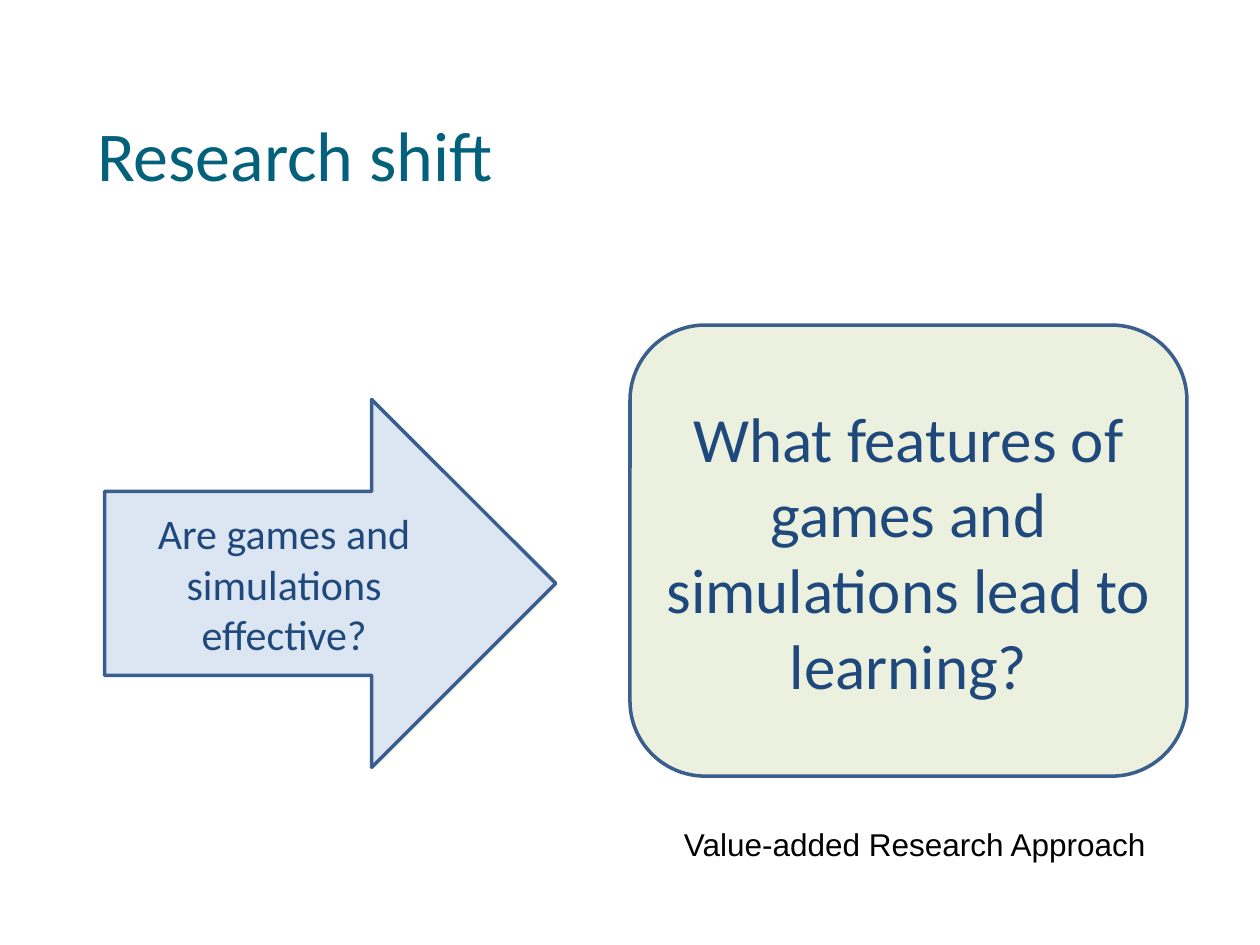
from pptx import Presentation
from pptx.dml.color import RGBColor
from pptx.enum.shapes import MSO_SHAPE
from pptx.enum.text import MSO_ANCHOR, PP_ALIGN
from pptx.util import Inches, Pt


def color(hex_string):
    return RGBColor.from_string(hex_string)


def write_text(shape, text, font_format, font_color, alignment, wrap):
    frame = shape.text_frame
    frame.word_wrap = wrap
    frame.vertical_anchor = MSO_ANCHOR.MIDDLE
    paragraph = frame.paragraphs[0]
    paragraph.alignment = alignment
    run = paragraph.add_run()
    run.text = text
    for name, value in font_format.items():
        setattr(run.font, name, value)
    run.font.color.rgb = color(font_color)


presentation = Presentation()
presentation.slide_width = Inches(10)
presentation.slide_height = Inches(7.5)
slide = presentation.slides.add_slide(presentation.slide_layouts[5])

# Title
title = slide.shapes.title
title_box = {"left": 0.67, "top": 0.86, "width": 3.35, "height": 0.72}
for name, value in title_box.items():
    setattr(title, name, Inches(value))
write_text(title, "Research shift", {"name": "Calibri", "size": Pt(40)},
           "04617B", PP_ALIGN.LEFT, False)

# Old question in the arrow, new question in the rounded box
questions = [
    (MSO_SHAPE.RIGHT_ARROW, (0.83, 3.17, 3.58, 2.92), "DCE6F2", 24,
     "Are games and simulations effective?"),
    (MSO_SHAPE.ROUNDED_RECTANGLE, (5, 2.58, 4.42, 3.58), "EBF1DE", 36,
     "What features of games and simulations lead to learning?"),
]
for kind, box, fill_color, size, text in questions:
    shape = slide.shapes.add_shape(kind, *map(Inches, box))
    shape.shadow.inherit = False
    shape.fill.solid()
    shape.fill.fore_color.rgb = color(fill_color)
    shape.line.color.rgb = color("3A5F8C")
    shape.line.width = Pt(2)
    write_text(shape, text, {"name": "Calibri", "size": Pt(size)},
               "1F497D", PP_ALIGN.CENTER, True)

# Caption below the new question
caption = slide.shapes.add_textbox(*map(Inches, (5.33, 6.5, 3.9, 0.4)))
write_text(caption, "Value-added Research Approach",
           {"name": "Arial", "size": Pt(18)}, "000000", PP_ALIGN.LEFT, False)

presentation.save("out.pptx")
